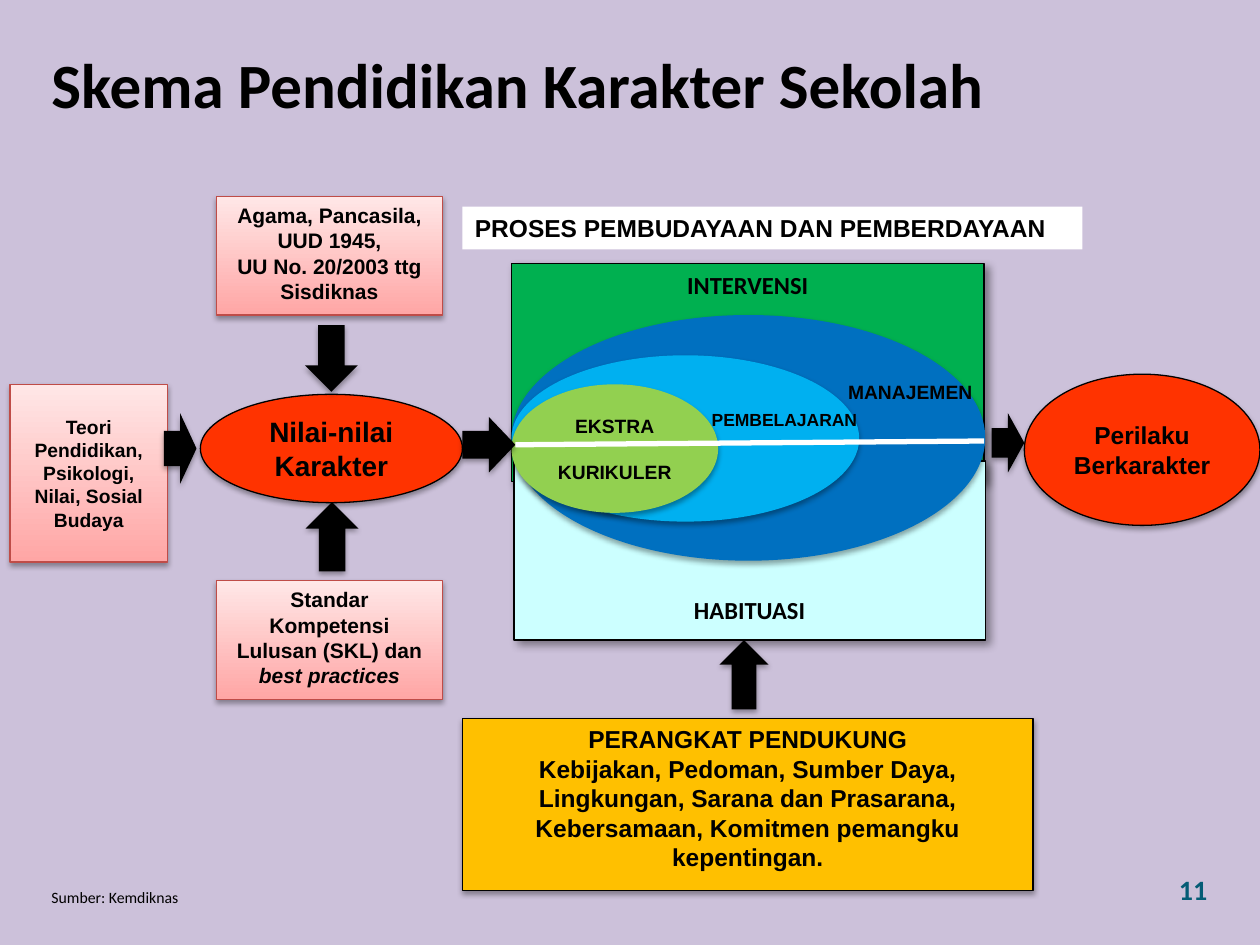
from dataclasses import dataclass

from lxml.etree import SubElement
from pptx import Presentation
from pptx.dml.color import RGBColor as RGB
from pptx.enum.shapes import MSO_CONNECTOR as CONN, MSO_SHAPE as SHAPE
from pptx.enum.text import MSO_ANCHOR as ANCHOR, PP_ALIGN as ALIGN
from pptx.oxml.ns import qn
from pptx.util import Inches, Pt


@dataclass(frozen=True)
class Theme:
    """Colours, fonts, type sizes and shadows of the slide."""
    background: str = "CCC1DA"
    black: str = "000000"
    white: str = "FFFFFF"
    number: str = "045C75"
    green: str = "00B050"
    mint: str = "CCFFFF"
    red: str = "FF3300"
    blue: str = "0070C0"
    sky: str = "00B0F0"
    lime: str = "92D050"
    amber: str = "FFC000"
    pink: tuple = ("FFA6A5", "FFE7E7")
    pink_edge: str = "BF4C48"
    sans: str = "Arial"
    heading: str = "Calibri"
    title: int = 36
    large: int = 16
    medium: int = 14
    normal: int = 12
    small: int = 11
    tiny: int = 10
    source: int = 9
    soft: tuple = (35, 3.1, 1.8, 90)
    side: tuple = (40, 5, 3, 45)


T = Theme()


def apply(obj, fmt):
    """Set every attribute named in a dict of format values."""
    for name, value in fmt.items():
        setattr(obj, name, value)


def write(shape, paras, size, font=T.sans, color=T.black, bold=True, align=ALIGN.CENTER,
          gap=0, **frame):
    """Fill a shape with paragraphs, each a string or a list of (text, italic) runs."""
    tf = shape.text_frame
    apply(tf, {"word_wrap": True, "vertical_anchor": ANCHOR.TOP, **frame})
    for i, runs in enumerate(paras):
        p = tf.add_paragraph() if i else tf.paragraphs[0]
        apply(p, {"alignment": align, "space_before": Pt(gap if i else 0)})
        for text, italic in [(runs, None)] if isinstance(runs, str) else runs:
            r = p.add_run()
            r.text = text
            apply(r.font, {"name": font, "size": Pt(size), "bold": bold, "italic": italic})
            r.font.color.rgb = RGB.from_string(color)


def cast_shadow(shape, alpha, blur, dist, angle):
    """Give a shape an outer shadow."""
    effects = shape._element.spPr.find(qn("a:effectLst"))
    shadow = SubElement(effects, qn("a:outerShdw"), blurRad=str(Pt(blur)), dist=str(Pt(dist)),
                        dir=str(angle * 60000), rotWithShape="0")
    color = SubElement(shadow, qn("a:srgbClr"), val=T.black)
    SubElement(color, qn("a:alpha"), val=str(alpha * 1000))


def add_block(s, kind, box, fill, line=None, shadow=T.soft):
    """Add a preset shape with a solid or two-colour fill."""
    sp = s.shapes.add_shape(kind, *map(Inches, box))
    sp.shadow.inherit = False
    if isinstance(fill, tuple):
        sp.fill.gradient()
        sp.fill.gradient_angle = 90
        for stop, color in zip(sp.fill.gradient_stops, fill):
            stop.color.rgb = RGB.from_string(color)
    else:
        sp.fill.solid()
        sp.fill.fore_color.rgb = RGB.from_string(fill)
    if line:
        sp.line.color.rgb = RGB.from_string(line)
        sp.line.width = Pt(0.75)
    else:
        sp.line.fill.background()
    if shadow:
        cast_shadow(sp, *shadow)
    return sp


def add_input(s, box, paras, size, **frame):
    """Add a pink box that feeds the values."""
    write(add_block(s, SHAPE.RECTANGLE, box, T.pink, T.pink_edge), paras, size, **frame)


def add_arrow(s, box, kind=SHAPE.RIGHT_ARROW, rotation=0):
    """Add a black block arrow."""
    add_block(s, kind, box, T.black).rotation = rotation


def add_label(s, box, text, size, **fmt):
    """Add a text box of one paragraph."""
    write(s.shapes.add_textbox(*map(Inches, box)), [text], size, **fmt)


def add_divider(s, start, end):
    """Add the white line between intervention and habituation."""
    c = s.shapes.add_connector(CONN.STRAIGHT, *map(Inches, start + end))
    c.line.color.rgb = RGB.from_string(T.white)
    c.line.width = Pt(3)
    SubElement(c._element.spPr, qn("a:effectLst"))


def add_process(s):
    """Add the two process fields and the nested ellipses with their labels."""
    write(add_block(s, SHAPE.RECTANGLE, (4.06, 2.09, 3.75, 1.73), T.green, T.black, T.side),
          ["INTERVENSI"], T.medium, T.heading)
    write(add_block(s, SHAPE.RECTANGLE, (4.08, 3.66, 3.74, 1.42), T.mint, T.black, T.side),
          ["HABITUASI"], T.medium, T.heading, margin_top=Inches(1.06))
    add_block(s, SHAPE.OVAL, (4.06, 2.5, 3.76, 1.95), T.blue)
    add_label(s, (6.56, 2.97, 1.33, 0.29), "MANAJEMEN", T.small)
    add_block(s, SHAPE.OVAL, (4.06, 2.82, 2.76, 1.32), T.sky)
    add_label(s, (5.55, 3.2, 1.48, 0.27), "PEMBELAJARAN", T.tiny, align=ALIGN.LEFT)
    write(add_block(s, SHAPE.OVAL, (4.06, 3.05, 1.64, 1.02), T.lime),
          ["EKSTRA", "KURIKULER"], T.small, gap=13, vertical_anchor=ANCHOR.MIDDLE)
    write(add_block(s, SHAPE.RECTANGLE, (3.67, 1.64, 4.92, 0.34), T.white, shadow=None),
          ["PROSES PEMBUDAYAAN DAN PEMBERDAYAAN"], T.medium, align=ALIGN.LEFT)


def add_surroundings(s):
    """Add the inputs, the values, the support box and the outcome."""
    add_input(s, (1.72, 1.56, 1.79, 0.94),
              ["Agama, Pancasila, UUD 1945,", "UU No. 20/2003 ttg Sisdiknas"], T.normal)
    add_input(s, (0.08, 3.05, 1.25, 1.41),
              ["Teori Pendidikan, Psikologi, Nilai, Sosial Budaya"], T.small,
              vertical_anchor=ANCHOR.MIDDLE)
    add_input(s, (1.72, 4.61, 1.79, 0.94),
              [[("Standar Kompetensi Lulusan (SKL) dan ", None), ("best practices", True)]],
              T.normal)
    for box, text, size in (((1.59, 3.13, 2.08, 0.86), "Nilai-nilai Karakter", T.large),
                            ((8.13, 2.97, 1.87, 1.2), "Perilaku Berkarakter", T.medium)):
        write(add_block(s, SHAPE.OVAL, box, T.red, T.black), [text], size,
              vertical_anchor=ANCHOR.MIDDLE)
    write(add_block(s, SHAPE.RECTANGLE, (3.67, 5.7, 4.53, 1.37), T.amber, T.black),
          ["PERANGKAT PENDUKUNG", "Kebijakan, Pedoman, Sumber Daya,",
           "Lingkungan, Sarana dan Prasarana, Kebersamaan, Komitmen pemangku kepentingan."],
          T.medium)


def add_arrows(s):
    """Add the arrows that link the parts."""
    for box in ((1.3, 3.28, 0.26, 0.56), (3.67, 3.31, 0.42, 0.44), (7.87, 3.28, 0.26, 0.47)):
        add_arrow(s, box)
    for box in ((2.36, 4.05, 0.55, 0.42), (5.63, 5.16, 0.55, 0.39)):
        add_arrow(s, box, rotation=270)
    add_arrow(s, (2.42, 2.58, 0.42, 0.53), SHAPE.DOWN_ARROW)


def main():
    """Build the slide and save it."""
    prs = Presentation()
    apply(prs, {"slide_width": Inches(10), "slide_height": Inches(7.5)})
    s = prs.slides.add_slide(prs.slide_layouts[6])
    s.background.fill.solid()
    s.background.fill.fore_color.rgb = RGB.from_string(T.background)
    add_label(s, (0.31, 0.31, 8.47, 0.71), "Skema Pendidikan Karakter Sekolah", T.title,
              font=T.heading, align=ALIGN.LEFT)
    add_process(s)
    add_surroundings(s)
    add_arrows(s)
    add_divider(s, (4.09, 3.53), (7.81, 3.5))
    add_label(s, (0.31, 7, 1.22, 0.25), "Sumber: Kemdiknas", T.source, font=T.heading,
              bold=False, align=ALIGN.LEFT, word_wrap=False)
    add_label(s, (9.14, 6.88, 0.54, 0.35), "11", T.large, font=T.heading, color=T.number,
              align=ALIGN.RIGHT, vertical_anchor=ANCHOR.MIDDLE)
    prs.save("out.pptx")


if __name__ == "__main__":
    main()
